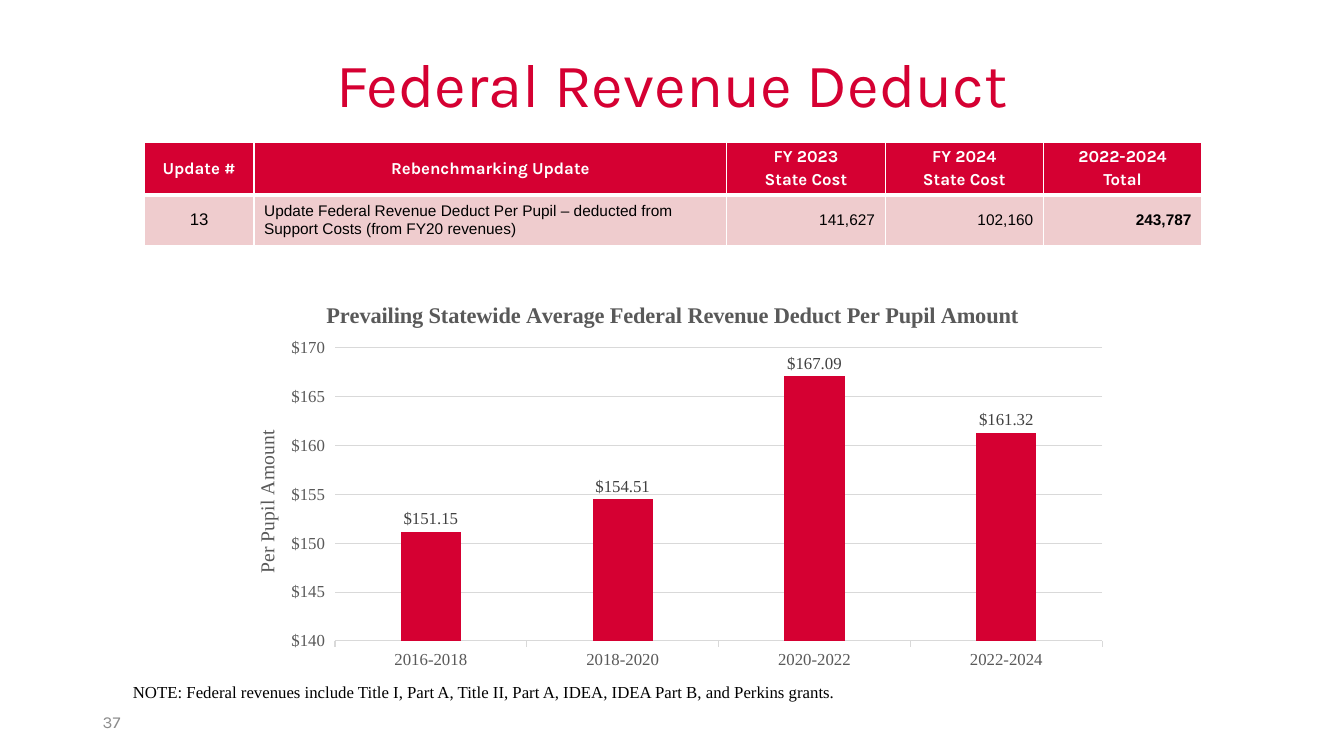
from lxml import etree
from pptx import Presentation
from pptx import util as u
from pptx.chart.data import CategoryChartData
from pptx.dml.color import RGBColor
from pptx.enum import chart as ch
from pptx.enum import text as t
from pptx.oxml import parse_xml
from pptx.oxml.ns import nsdecls, qn

RED, PINK, WHITE, BLACK = "D50032", "EFCCCE", "FFFFFF", "000000"
GREY, RULE = "595959", "D9D9D9"
SERIF = "Times New Roman"
LEFT, CENTER, RIGHT = t.PP_ALIGN.LEFT, t.PP_ALIGN.CENTER, t.PP_ALIGN.RIGHT


def rgb(value):
    return RGBColor.from_string(value)


def write(frame, content, font, size, color, bold=False, align=LEFT, gap=0, spacing=None):
    """Fill a text frame, one paragraph per line, with gap points between them."""
    for index, line in enumerate(content.split("\n")):
        paragraph = frame.add_paragraph() if index else frame.paragraphs[0]
        paragraph.alignment = align
        if index and gap:
            paragraph.space_before = u.Pt(gap)
        if spacing:
            paragraph.line_spacing = spacing
        run = paragraph.add_run()
        run.text = line
        run.font.name, run.font.size, run.font.bold = font, u.Pt(size), bold
        run.font.color.rgb = rgb(color)


deck = Presentation()
deck.slide_width, deck.slide_height = u.Inches(13.33), u.Inches(7.5)
slide = deck.slides.add_slide(deck.slide_layouts[5])

title = slide.shapes.title
title.left, title.top = u.Inches(0.92), u.Inches(0.4)
title.width, title.height = u.Inches(11.5), u.Inches(0.94)
title.text_frame.vertical_anchor = t.MSO_ANCHOR.MIDDLE
write(title.text_frame, "Federal Revenue Deduct", "Karla", 44, RED, align=CENTER, spacing=0.9)

# Cost table
headings = ["Update #", "Rebenchmarking Update", "FY 2023\nState Cost",
            "FY 2024\nState Cost", "2022-2024\nTotal"]
update = ["13", "Update Federal Revenue Deduct Per Pupil – deducted from "
          "Support Costs (from FY20 revenues)", "141,627", "102,160", "243,787"]
update_aligns = [CENTER, LEFT, RIGHT, RIGHT, RIGHT]
costs = slide.shapes.add_table(2, 5, u.Inches(1.43), u.Inches(1.41),
                               u.Inches(10.49), u.Inches(1.02)).table
for column, width in zip(costs.columns, [1.09, 4.69, 1.57, 1.57, 1.57]):
    column.width = u.Inches(width)
for row, height in zip(costs.rows, [0.52, 0.5]):
    row.height = u.Inches(height)

for r, entries in enumerate([headings, update]):
    for c, entry in enumerate(entries):
        cell = costs.cell(r, c)
        for side in "LRTB":
            thick = (r, side) in [(0, "B"), (1, "T")]
            cell._tc.get_or_add_tcPr().append(parse_xml(
                f'<a:ln{side} {nsdecls("a")} w="{u.Pt(3 if thick else 1)}"><a:solidFill>'
                f'<a:srgbClr val="{WHITE}"/></a:solidFill></a:ln{side}>'))
        cell.fill.solid()
        cell.fill.fore_color.rgb = rgb(PINK if r else RED)
        cell.vertical_anchor = t.MSO_ANCHOR.MIDDLE
        cell.margin_left = cell.margin_right = u.Inches(0.1)
        cell.margin_top = cell.margin_bottom = u.Inches(0 if r else 0.05)
        if r == 0:
            write(cell.text_frame, entry, "Karla", 12, WHITE, bold=True, align=CENTER, gap=2.4)
        else:
            write(cell.text_frame, entry, "Arial", 11 if c else 12, BLACK,
                  bold=c == 4, align=update_aligns[c])

# Page number and note
page = slide.shapes.add_textbox(u.Inches(0.92), u.Inches(6.96), u.Inches(3), u.Inches(0.4))
page.text_frame.vertical_anchor = t.MSO_ANCHOR.MIDDLE
write(page.text_frame, "37", "Karla", 12, "8C8C8C")

note = slide.shapes.add_textbox(u.Inches(1.22), u.Inches(6.71), u.Inches(9.26), u.Inches(0.3))
note.text_frame.word_wrap = True
write(note.text_frame, "NOTE: Federal revenues include Title I, Part A, Title II, Part A, "
      "IDEA, IDEA Part B, and Perkins grants.", SERIF, 12, BLACK)

# Per pupil chart
amounts = CategoryChartData()
amounts.categories = ["2016-2018", "2018-2020", "2020-2022", "2022-2024"]
amounts.add_series("Series 1", [151.15, 154.51, 167.09, 161.32])
chart = slide.shapes.add_chart(ch.XL_CHART_TYPE.COLUMN_CLUSTERED, u.Inches(2.22), u.Inches(2.77),
                               u.Inches(8.89), u.Inches(3.94), amounts).chart
chart.has_legend = False
chart.font.name, chart.font.size = SERIF, u.Pt(10)
chart.font.color.rgb = rgb(BLACK)
chart.has_title = True
write(chart.chart_title.text_frame,
      "Prevailing Statewide Average Federal Revenue Deduct Per Pupil Amount",
      SERIF, 16, GREY, bold=True, align=CENTER)
chart.chart_title.include_in_layout = False

periods, dollars = chart.category_axis, chart.value_axis
for axis in (periods, dollars):
    axis.major_tick_mark = ch.XL_TICK_MARK.OUTSIDE
    axis.minor_tick_mark = ch.XL_TICK_MARK.NONE
    axis.tick_labels.font.name, axis.tick_labels.font.size = SERIF, u.Pt(12)
    axis.tick_labels.font.color.rgb = rgb(GREY)
dollars.minimum_scale, dollars.maximum_scale, dollars.major_unit = 140, 170, 5
dollars.tick_labels.number_format = '"$"#,##0'
dollars.tick_labels.number_format_is_linked = False
dollars.format.line.fill.background()
dollars.has_major_gridlines = True
for line in (periods.format.line, dollars.major_gridlines.format.line):
    line.width = u.Pt(0.75)
    line.color.rgb = rgb(RULE)
dollars.has_title = True
write(dollars.axis_title.text_frame, "Per Pupil Amount", SERIF, 14, GREY, align=CENTER)

plot = chart.plots[0]
plot.gap_width, plot.overlap, plot.vary_by_categories = 219, -27, False
bars = plot.series[0]
bars.format.fill.solid()
bars.format.fill.fore_color.rgb = rgb(RED)
labels = bars.data_labels
labels.show_value = True
labels.position = ch.XL_LABEL_POSITION.OUTSIDE_END
labels.number_format, labels.number_format_is_linked = '"$"#,##0.00', False
labels.font.name, labels.font.size = SERIF, u.Pt(12)
labels.font.color.rgb = rgb("404040")

# Chart layout as fractions of the chart frame
plot_area = chart._chartSpace.find(".//" + qn("c:plotArea"))
placements = [
    (plot_area, {"x": 0.124, "y": 0.173, "w": 0.856, "h": 0.738}),
    (chart.chart_title._element, {"x": 0.11, "y": 0.045}),
    (dollars.axis_title._element, {"x": 0.03, "y": 0.37}),
]
for part, fractions in placements:
    for old in part.findall(qn("c:layout")):
        part.remove(old)
    layout = etree.Element(qn("c:layout"))
    manual = etree.SubElement(layout, qn("c:manualLayout"))
    if part is plot_area:
        etree.SubElement(manual, qn("c:layoutTarget"), val="inner")
    for side in "xy":
        etree.SubElement(manual, qn(f"c:{side}Mode"), val="edge")
    for side, fraction in fractions.items():
        etree.SubElement(manual, qn(f"c:{side}"), val=str(fraction))
    part.insert(0 if part is plot_area else 1, layout)

deck.save("out.pptx")
